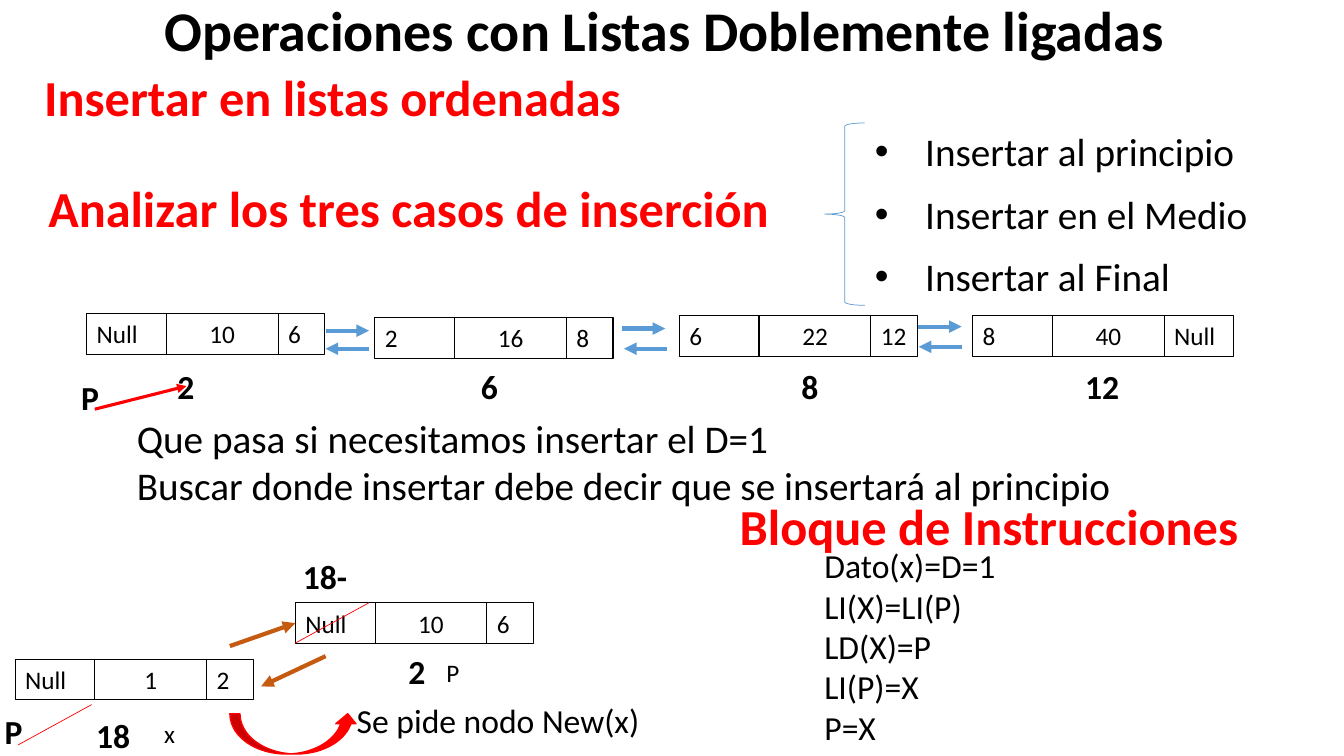
from lxml import etree
from pptx import Presentation
from pptx.dml.color import RGBColor
from pptx.enum.shapes import MSO_CONNECTOR, MSO_SHAPE
from pptx.enum.text import MSO_ANCHOR, MSO_AUTO_SIZE, PP_ALIGN
from pptx.oxml.ns import qn
from pptx.util import Pt

BLACK = RGBColor(0x00, 0x00, 0x00)
RED = RGBColor(0xFF, 0x00, 0x00)
BLUE = RGBColor(0x5B, 0x9B, 0xD5)
BROWN = RGBColor(0xC5, 0x5A, 0x11)
LEFT, CENTER = PP_ALIGN.LEFT, PP_ALIGN.CENTER
TOP, NO_FIT = MSO_ANCHOR.TOP, MSO_AUTO_SIZE.NONE
RECTANGLE, BRACE = MSO_SHAPE.RECTANGLE, MSO_SHAPE.LEFT_BRACE
CURVED_ARROW = MSO_SHAPE.CURVED_UP_ARROW
STRAIGHT = MSO_CONNECTOR.STRAIGHT

HEADING = {"size": Pt(36), "bold": True}
BODY = {"size": Pt(28), "bold": False}
ADDRESS = {"size": Pt(24), "bold": True}
CODE = {"size": Pt(24), "bold": False}
SMALL = {"size": Pt(18), "bold": False}


def write(box, lines, style, color=BLACK, align=LEFT, bullet=False):
    """Fill a text shape with one paragraph per line."""
    frame = box.text_frame
    frame.word_wrap = True
    frame.auto_size = NO_FIT
    frame.vertical_anchor = TOP
    frame.text = lines
    for paragraph in frame.paragraphs:
        paragraph.alignment = align
        if bullet:
            properties = paragraph._p.get_or_add_pPr()
            properties.set("marL", str(Pt(36)))
            properties.set("indent", str(-Pt(36)))
            etree.SubElement(properties, qn("a:buFont")).set("typeface", "Arial")
            etree.SubElement(properties, qn("a:buChar")).set("char", "•")
        font = paragraph.font
        font.name = "Calibri"
        font.color.rgb = color
        for attribute, value in style.items():
            setattr(font, attribute, value)


def connect(x1, y1, x2, y2, color, width, arrow=True):
    """Draw a straight line, with an arrowhead at its end if asked."""
    link = slide.shapes.add_connector(STRAIGHT, Pt(x1), Pt(y1), Pt(x2), Pt(y2))
    link.line.color.rgb = color
    link.line.width = Pt(width)
    if arrow:
        etree.SubElement(link.line._get_or_add_ln(), qn("a:tailEnd")).set("type", "triangle")
    etree.SubElement(link._element.spPr, qn("a:effectLst"))
    return link


presentation = Presentation()
presentation.slide_width, presentation.slide_height = Pt(960), Pt(540)
slide = presentation.slides.add_slide(presentation.slide_layouts[5])

# Title
title = slide.shapes.title
title.left, title.top, title.width, title.height = Pt(110.2), Pt(-6.5), Pt(787.7), Pt(55.4)
write(title, "Operaciones con Listas Doblemente ligadas", {"size": Pt(40), "bold": True})

# Headings, explanations and instructions
instructions = "\n".join(["Dato(x)=D=1", "LI(X)=LI(P)", "LD(X)=P", "LI(P)=X", "P=X"])
question = ("Que pasa si necesitamos insertar el D=1\n"
            "Buscar donde insertar debe decir que se insertará al principio")
for lines, left, top, width, height, style, color in [
    ("Insertar en listas ordenadas", 24.5, 43.9, 481, 51, HEADING, RED),
    ("Analizar los tres casos de inserción", 27.4, 123.1, 722, 51, HEADING, RED),
    (question, 90.7, 292.3, 809, 75, BODY, BLACK),
    ("Bloque de Instrucciones", 521.3, 349.9, 481, 51, HEADING, RED),
    (instructions, 581.8, 385.9, 144, 152.6, CODE, BLACK),
    ("Se pide nodo New(x)", 247.7, 496.1, 265, 36, CODE, BLACK),
    ("P", 311.8, 465.8, 39, 29, SMALL, BLACK),
    ("x", 110.2, 509.8, 39.6, 29, SMALL, BLACK),
]:
    note = slide.shapes.add_textbox(Pt(left), Pt(top), Pt(width), Pt(height))
    write(note, lines, style, color)

# Three insertion cases with their brace
for row, case in enumerate(["Insertar al principio", "Insertar en el Medio", "Insertar al Final"]):
    case_box = slide.shapes.add_textbox(Pt(617.8), Pt(87.6 + 44.6 * row), Pt(317), Pt(41))
    write(case_box, case, BODY, bullet=True)
cases_brace = slide.shapes.add_shape(BRACE, Pt(589), Pt(87.8), Pt(28.8), Pt(130.3))
cases_brace.shadow.inherit = False
cases_brace.fill.background()
cases_brace.line.color.rgb = BLUE
cases_brace.line.width = Pt(0.5)

# List nodes: left link, data, right link
for left, top, values, last_width in [
    (61.9, 223.9, ("Null", "10", "6"), 33.3),
    (267.8, 226.8, ("2", "16", "8"), 33.3),
    (485.3, 225.4, ("6", "22", "12"), 33.3),
    (694.8, 225.4, ("8", "40", "Null"), 49.7),
    (10.8, 470.9, ("Null", "1", "2"), 33.3),
    (211, 430.6, ("Null", "10", "6"), 33.3),
]:
    cells = []
    for value, width, align in zip(values, (56.9, 79.9, last_width), (LEFT, CENTER, LEFT)):
        cell = slide.shapes.add_shape(RECTANGLE, Pt(left), Pt(top), Pt(width), Pt(29))
        cell.shadow.inherit = False
        cell.fill.background()
        cell.line.color.rgb = BLACK
        cell.line.width = Pt(0.75)
        write(cell, value, SMALL, align=align)
        cells.append(cell)
        left += width
old_first_link = cells[0]

# Node addresses and pointer labels
for address, left, top, width in [
    ("2", 107.3, 257.8, 51), ("6", 324, 257.8, 51),
    ("8", 553, 257.8, 51), ("12", 761.8, 257.8, 51),
    ("P", 38.9, 265.7, 51), ("18-", 206.6, 393.8, 51),
    ("2", 272.2, 461.5, 51), ("18", 55.4, 506.9, 51), ("P", -5.8, 504, 31),
]:
    label = slide.shapes.add_textbox(Pt(left), Pt(top), Pt(width), Pt(36))
    write(label, address, ADDRESS, align=CENTER)

# Links between neighbouring nodes, forward and back
for forward_x, forward_y, back_x, back_y in [
    (232.6, 236.2, 232.6, 249.1),
    (444.2, 234.7, 445.7, 249.1),
    (655.9, 233.3, 656.3, 247.7),
]:
    connect(forward_x, forward_y, forward_x + 31, forward_y, BLUE, 3)
    connect(back_x + 31, back_y, back_x, back_y, BLUE, 3)

# Pointer P, new links and struck-out values
connect(67.7, 292.3, 133.2, 275.8, RED, 2.25)
new_link = connect(164.2, 461.5, 211, 445, BROWN, 3)
new_link.end_connect(old_first_link, 1)
connect(232.6, 468.7, 186.5, 490.3, BROWN, 3)
for right, top in [(263.5, 430.6), (65.5, 503.3)]:
    connect(right, top, right - 52.6, top + 28.8, RED, 0.5, arrow=False)

# Curved arrow to the request for a new node
request_arrow = slide.shapes.add_shape(CURVED_ARROW, Pt(164.2), Pt(509.8), Pt(91.4), Pt(28.8))
request_arrow.shadow.inherit = False
request_arrow.fill.solid()
request_arrow.fill.fore_color.rgb = RED
request_arrow.line.color.rgb = RED
request_arrow.line.width = Pt(1)

presentation.save("out.pptx")
